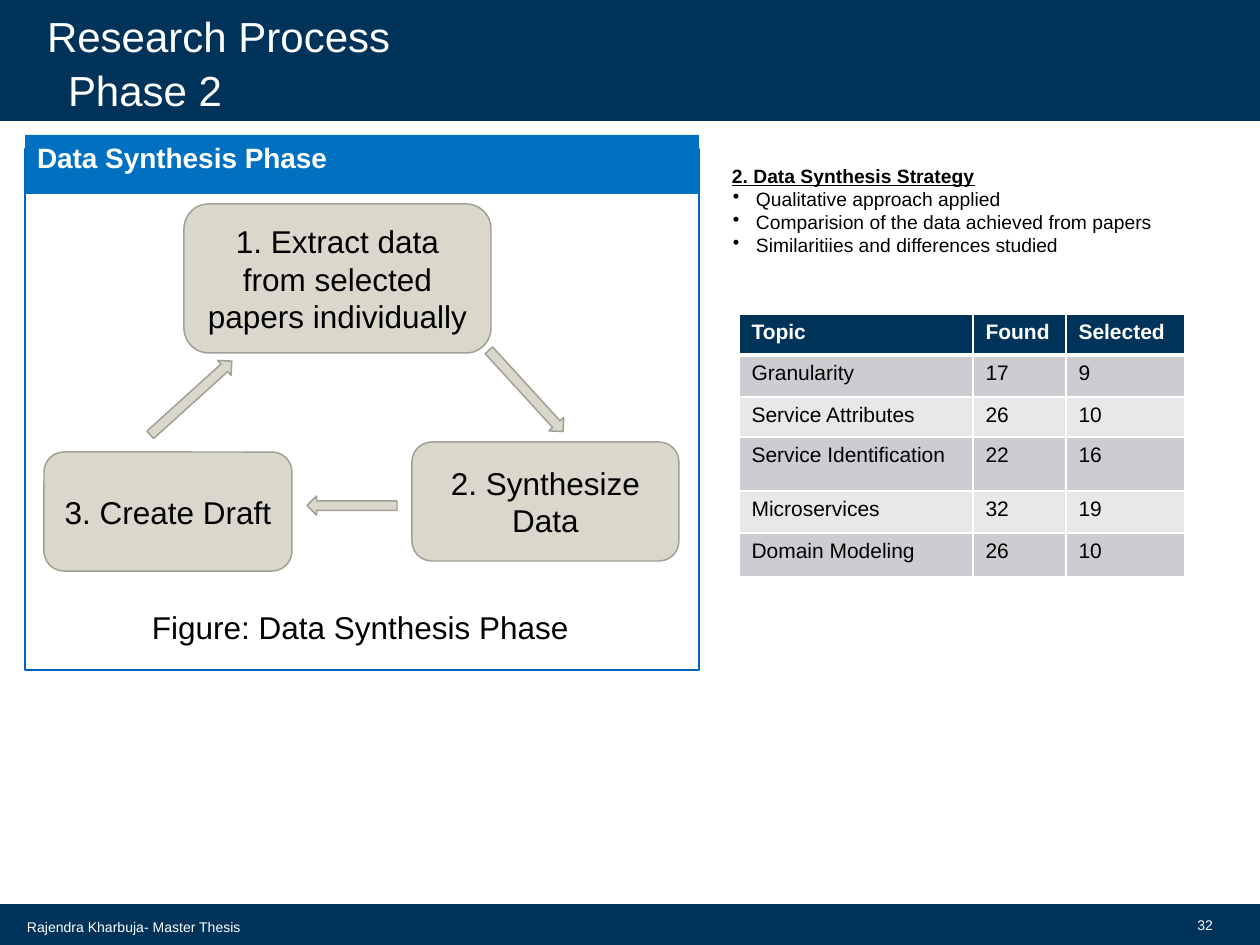
from pptx import Presentation
from pptx.dml.color import RGBColor
from pptx.enum.shapes import MSO_SHAPE
from pptx.enum.text import MSO_ANCHOR, PP_ALIGN
from pptx.oxml.ns import qn
from pptx.util import Pt
from lxml.etree import SubElement

EMU_PER_PX = 914400 / 126
COLORS = {
    "navy": "003359", "blue": "0070C0", "frame": "0065BD", "sand": "DAD7CB",
    "sand_edge": "A19F96", "band_dark": "CCCDD1", "band_light": "E7E8E9",
    "white": "FFFFFF", "black": "000000",
}
STRATEGY = [
    "2. Data Synthesis Strategy",
    "Qualitative approach applied",
    "Comparision of the data achieved from papers",
    "Similaritiies and differences studied",
]
PAPER_COUNTS = [
    ("Topic", "Found", "Selected"),
    ("Granularity", "17", "9"),
    ("Service Attributes", "26", "10"),
    ("Service Identification", "22", "16"),
    ("Microservices", "32", "19"),
    ("Domain Modeling", "26", "10"),
]
COLUMN_WIDTHS = (234, 93, 119)
ROW_HEIGHTS = (41, 42, 40, 54, 42, 44)


def px(length):
    return round(length * EMU_PER_PX)


def rgb(color):
    return RGBColor.from_string(COLORS[color])


def style_font(font, size, color="black", bold=False):
    font.name = "Arial"
    font.size = Pt(size)
    font.bold = bold
    font.color.rgb = rgb(color)


def fill_text(frame, lines, size, color="black", bold=False,
              align=PP_ALIGN.LEFT, anchor=MSO_ANCHOR.TOP, inset=6):
    frame.word_wrap = True
    frame.vertical_anchor = anchor
    frame.margin_left = frame.margin_right = px(12)
    frame.margin_top = frame.margin_bottom = px(inset)
    frame.text = "\n".join(lines)
    for paragraph in frame.paragraphs:
        paragraph.alignment = align
        for run in paragraph.runs:
            style_font(run.font, size, color, bold)


def add_text(slide, box, lines, size, **style):
    label = slide.shapes.add_textbox(*map(px, box))
    fill_text(label.text_frame, lines, size, **style)
    return label


def add_block(slide, kind, box, fill=None, line=None, width=0.85):
    block = slide.shapes.add_shape(kind, *map(px, box))
    block.shadow.inherit = False
    if fill:
        block.fill.solid()
        block.fill.fore_color.rgb = rgb(fill)
    else:
        block.fill.background()
    if line:
        block.line.color.rgb = rgb(line)
        block.line.width = Pt(width)
    else:
        block.line.fill.background()
    return block


def add_step(slide, box, label):
    step = add_block(slide, MSO_SHAPE.ROUNDED_RECTANGLE, box, "sand", "sand_edge")
    fill_text(step.text_frame, [label], 18, align=PP_ALIGN.CENTER,
              anchor=MSO_ANCHOR.MIDDLE)


def add_step_arrow(slide, box, rotation):
    arrow = add_block(slide, MSO_SHAPE.RIGHT_ARROW, box, "sand", "sand_edge")
    arrow.rotation = rotation


def add_bullet(paragraph):
    properties = paragraph._p.get_or_add_pPr()
    properties.set("marL", str(px(24)))
    properties.set("indent", str(px(-23)))
    SubElement(properties, qn("a:buChar")).set("char", "•")


def set_border(cell, side, width):
    edge = SubElement(cell._tc.get_or_add_tcPr(), qn(f"a:{side}"), w=str(Pt(width)))
    solid = SubElement(edge, qn("a:solidFill"))
    SubElement(solid, qn("a:srgbClr"), val=COLORS["white"])


def fill_cell(cell, text, row):
    header = row == 0
    thick_sides = {0: "lnB", 1: "lnT"}
    # Borders must precede the fill in the cell properties.
    for side in ("lnL", "lnR", "lnT", "lnB"):
        set_border(cell, side, 3 if thick_sides.get(row) == side else 0.96)
    cell.fill.solid()
    band = "band_dark" if row % 2 else "band_light"
    cell.fill.fore_color.rgb = rgb("navy" if header else band)
    cell.text = text
    style_font(cell.text_frame.paragraphs[0].runs[0].font, 12,
               "white" if header else "black", header)


def add_paper_table(slide):
    box = (739, 314, sum(COLUMN_WIDTHS), sum(ROW_HEIGHTS))
    table = slide.shapes.add_table(len(ROW_HEIGHTS), len(COLUMN_WIDTHS),
                                   *map(px, box)).table
    for column, width in zip(table.columns, COLUMN_WIDTHS):
        column.width = px(width)
    for row, (height, values) in enumerate(zip(ROW_HEIGHTS, PAPER_COUNTS)):
        table.rows[row].height = px(height)
        for column, value in enumerate(values):
            fill_cell(table.cell(row, column), value, row)


def add_header_and_footer(slide):
    for top, height in ((905, 40), (0, 120)):
        add_block(slide, MSO_SHAPE.RECTANGLE, (0, top, 1260, height),
                  "navy", "navy", 1.35)
    for left, top, title in ((35, 12, "Research Process"), (56, 66, "Phase 2")):
        add_text(slide, (left, top, 1038, 49), [title], 24, color="white",
                 anchor=MSO_ANCHOR.BOTTOM, inset=0)
    add_text(slide, (15, 907, 268, 39), ["Rajendra Kharbuja- Master Thesis"], 8,
             color="white", anchor=MSO_ANCHOR.MIDDLE)
    add_text(slide, (1145, 905, 80, 40), ["32"], 8, color="white",
             align=PP_ALIGN.RIGHT, anchor=MSO_ANCHOR.MIDDLE)


def add_synthesis_cycle(slide):
    add_step(slide, (412, 442, 267, 119), "2. Synthesize Data")
    add_step(slide, (44, 452, 248, 119), "3. Create Draft")
    add_step(slide, (184, 204, 307, 149),
             "1. Extract data from selected papers individually")
    add_block(slide, MSO_SHAPE.RECTANGLE, (25, 149, 674, 521),
              line="frame", width=0.75)
    heading = add_block(slide, MSO_SHAPE.RECTANGLE, (25, 135, 674, 59), "blue")
    fill_text(heading.text_frame, ["Data Synthesis Phase"], 16,
              color="white", bold=True)
    add_step_arrow(slide, (471, 381, 110, 20), 47.6)
    add_step_arrow(slide, (136, 388, 110, 20), 317.9)
    add_step_arrow(slide, (307, 496, 90, 19), 180)
    add_text(slide, (140, 602, 460, 50), ["Figure: Data Synthesis Phase"], 18)


def add_strategy(slide):
    strategy = add_text(slide, (720, 158, 476, 136), STRATEGY, 11)
    heading, *points = strategy.text_frame.paragraphs
    heading.runs[0].font.bold = True
    heading.runs[0].font.underline = True
    for point in points:
        add_bullet(point)


def main():
    presentation = Presentation()
    presentation.slide_width = px(1260)
    presentation.slide_height = px(945)
    slide = presentation.slides.add_slide(presentation.slide_layouts[6])
    add_header_and_footer(slide)
    add_synthesis_cycle(slide)
    add_strategy(slide)
    add_paper_table(slide)
    presentation.save("out.pptx")


if __name__ == "__main__":
    main()
